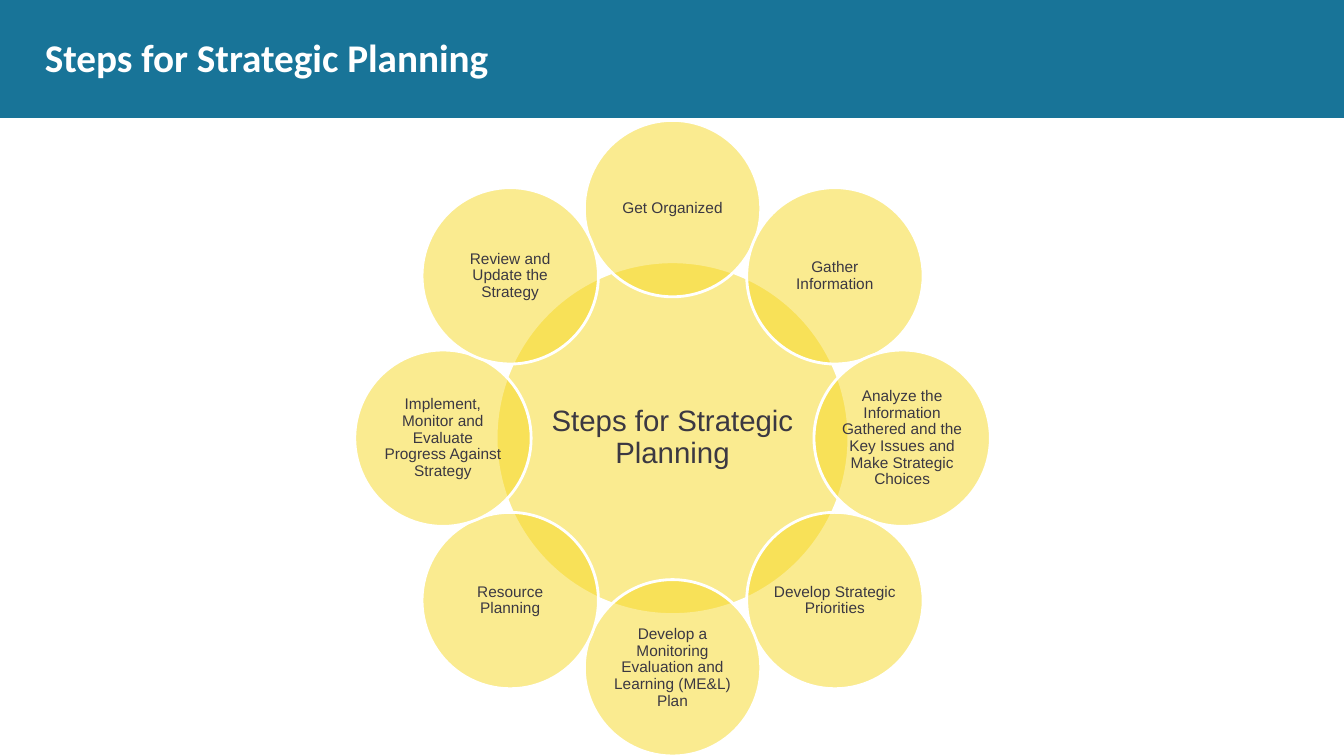
import dataclasses
import math

import pptx
import pptx.dml.color
import pptx.enum.shapes
import pptx.enum.text
import pptx.oxml.ns
import pptx.util
import lxml.etree

Pt = pptx.util.Pt
ALIGN = pptx.enum.text.PP_ALIGN
SHAPE = pptx.enum.shapes.MSO_SHAPE

SLIDE_WIDTH, SLIDE_HEIGHT = 960, 540
TITLE = "Steps for Strategic Planning"

# Steps run clockwise from the top
STEPS = [
    "Get Organized",
    "Gather Information",
    "Analyze the Information Gathered and the Key Issues and Make Strategic Choices",
    "Develop Strategic Priorities",
    "Develop a Monitoring Evaluation and Learning (ME&L) Plan",
    "Resource Planning",
    "Implement, Monitor and Evaluate Progress Against Strategy",
    "Review and Update the Strategy",
]
WHEEL_X, WHEEL_Y = 480.4, 313
ORBIT_RADIUS = 164
HUB_DIAMETER = 252
STEP_DIAMETER = HUB_DIAMETER / 2


@dataclasses.dataclass(frozen=True)
class Theme:
    banner: str = "187498"
    circle: str = "F7D822"
    text: str = "3B3842"
    white: str = "FFFFFF"
    title_font: str = "Calibri"
    body_font: str = "Arial"
    title_size: int = 28
    hub_size: int = 21
    step_size: int = 11
    outline: int = 2
    circle_opacity: int = 50


def rgb(value):
    return pptx.dml.color.RGBColor.from_string(value)


def write_text(shape, text, *, font, size, color, bold=False,
               align=ALIGN.LEFT, line_spacing=1.0, inset=0):
    frame = shape.text_frame
    frame.word_wrap = True
    frame.vertical_anchor = pptx.enum.text.MSO_ANCHOR.MIDDLE
    frame.margin_left = frame.margin_right = Pt(inset)
    frame.margin_top = frame.margin_bottom = Pt(inset)
    paragraph = frame.paragraphs[0]
    paragraph.alignment = align
    paragraph.line_spacing = line_spacing
    run = paragraph.add_run()
    run.text = text
    run.font.name = font
    run.font.size = Pt(size)
    run.font.bold = bold
    run.font.color.rgb = rgb(color)


class SlideBuilder:
    def __init__(self, slide, theme):
        self.slide = slide
        self.theme = theme

    def add_filled(self, kind, left, top, width, height, fill):
        shape = self.slide.shapes.add_shape(
            kind, Pt(left), Pt(top), Pt(width), Pt(height))
        shape.shadow.inherit = False
        shape.fill.solid()
        shape.fill.fore_color.rgb = rgb(fill)
        return shape

    def banner(self, height):
        shape = self.add_filled(
            SHAPE.RECTANGLE, 0, 0, SLIDE_WIDTH, height, self.theme.banner)
        shape.line.fill.background()

    def title(self, text, left, top, width, height):
        box = self.slide.shapes.add_textbox(
            Pt(left), Pt(top), Pt(width), Pt(height))
        write_text(box, text, font=self.theme.title_font,
                   size=self.theme.title_size, color=self.theme.white, bold=True)

    def circle(self, text, center_x, center_y, diameter, size, inset):
        shape = self.add_filled(
            SHAPE.OVAL, center_x - diameter / 2, center_y - diameter / 2,
            diameter, diameter, self.theme.circle)
        shape.line.color.rgb = rgb(self.theme.white)
        shape.line.width = Pt(self.theme.outline)
        # Make the fill translucent
        qualified = pptx.oxml.ns.qn
        color = shape.element.spPr.find(
            qualified("a:solidFill") + "/" + qualified("a:srgbClr"))
        alpha = lxml.etree.SubElement(color, qualified("a:alpha"))
        alpha.set("val", str(self.theme.circle_opacity * 1000))
        write_text(shape, text, font=self.theme.body_font, size=size,
                   color=self.theme.text, align=ALIGN.CENTER,
                   line_spacing=0.9, inset=inset)


def main():
    presentation = pptx.Presentation()
    presentation.slide_width = Pt(SLIDE_WIDTH)
    presentation.slide_height = Pt(SLIDE_HEIGHT)
    slide = presentation.slides.add_slide(presentation.slide_layouts[6])
    theme = Theme()
    builder = SlideBuilder(slide, theme)

    # Header
    builder.banner(84.2)
    builder.title(TITLE, 32, 14, 897, 53)

    # Hub of the wheel
    builder.circle(TITLE, WHEEL_X, WHEEL_Y, HUB_DIAMETER, theme.hub_size, 2)

    # Steps, evenly spaced around the hub
    for index, step in enumerate(STEPS):
        angle = math.tau * index / len(STEPS)
        builder.circle(step,
                       WHEEL_X + ORBIT_RADIUS * math.sin(angle),
                       WHEEL_Y - ORBIT_RADIUS * math.cos(angle),
                       STEP_DIAMETER, theme.step_size, 1)

    presentation.save("out.pptx")


if __name__ == "__main__":
    main()
